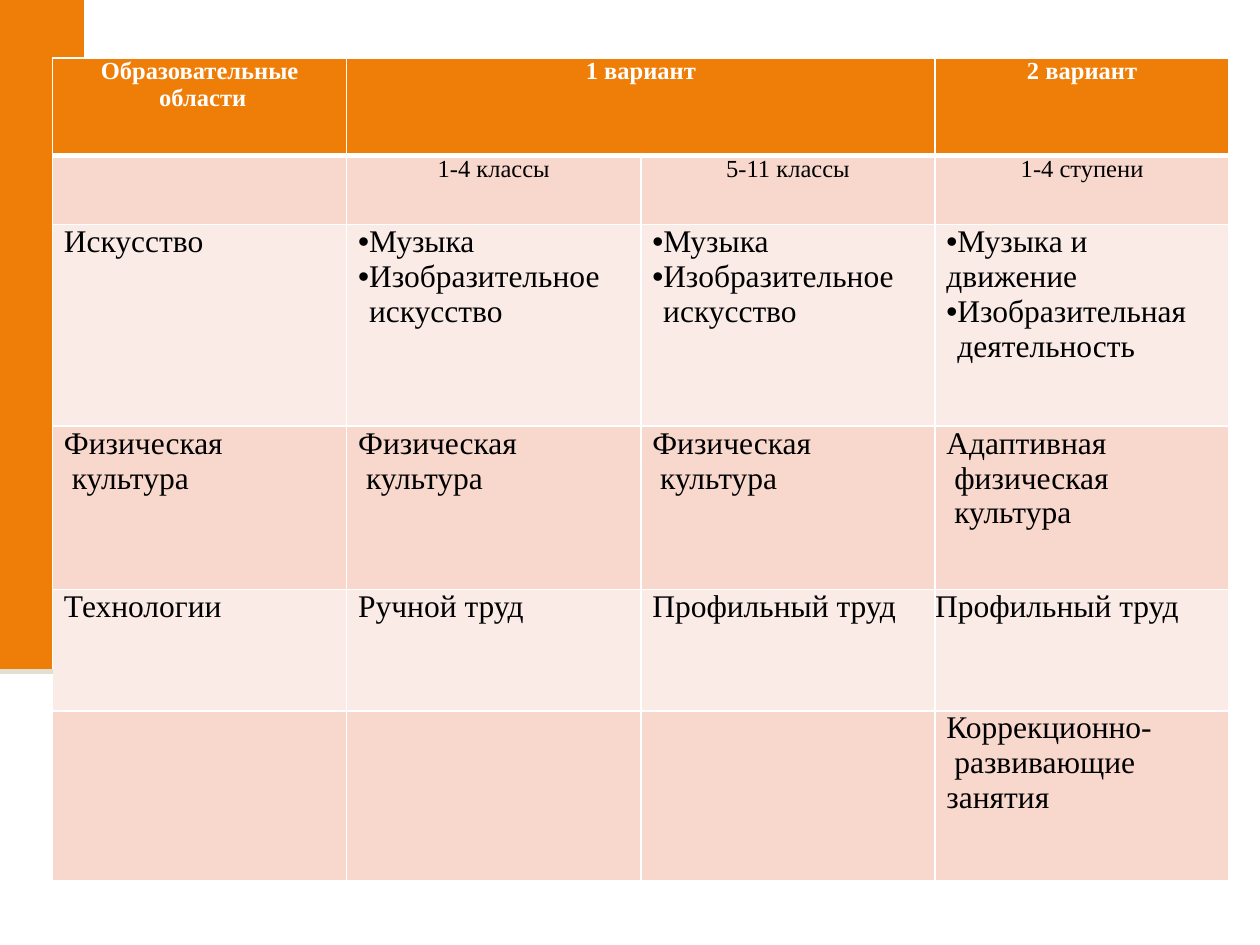
"""Builds a slide with a table of educational areas by programme variant."""
import pptx
import pptx.dml.color
import pptx.enum.text
import pptx.oxml.ns
import pptx.util
from lxml import etree
from pptx.util import Cm, Pt

THEME = {
    "accent": "EF7E09", "dark_band": "F8D7CC", "light_band": "FBEBE7",
    "edge": "E2DED1", "white": "FFFFFF", "text": "000000",
    "font": "Times New Roman", "bullet_font": "Arial",
    "head_size": 14, "body_size": 18,
    "thin": 1, "header_rule": 3, "edge_rule": 3.5,
}

BULLET = "•"
ARTS = ["•Музыка", "•Изобразительное искусство"]
PHYSICAL = ["Физическая\v культура"]
ROWS = [
    (0, [["Образовательные\v области"], ["1 вариант"], [], ["2 вариант"]]),
    (1, [[], ["1-4 классы"], ["5-11 классы"], ["1-4 ступени"]]),
    (2, [["Искусство"], ARTS, ARTS,
         ["•Музыка и", "движение", "•Изобразительная деятельность"]]),
    (3, [PHYSICAL, PHYSICAL, PHYSICAL, ["Адаптивная\v физическая\v культура"]]),
    (4, [["Технологии"], ["Ручной труд"], ["Профильный труд"], ["Профильный труд"]]),
    (6, [[], [], [], ["Коррекционно-\v развивающие занятия"]]),
]
FLUSH_CELL = (4, 4)
ROW_HEIGHTS = [1.96, 1.4, 4.06, 3.3, 1.65, 0.79, 3.43]
ROW_FILLS = ["accent", "dark_band", "light_band", "dark_band",
             "light_band", "light_band", "dark_band"]
COLUMN_WIDTHS = [1.09] + [5.93] * 4
TABLE_LEFT, TABLE_TOP = -0.03, 1.17
SIDE_WIDTH, SIDE_HEIGHT = 1.7, 13.54
TEXT_INDENT, BULLET_INDENT = 0.23, 0.22
MERGES = [((0, 0), (4, 0)), ((0, 2), (0, 3)), ((5, 0), (6, 0))]
MERGES += [((4, column), (5, column)) for column in range(1, 5)]


def color(name):
    return pptx.dml.color.RGBColor.from_string(THEME[name])


def set_borders(cell, borders):
    properties = cell._tc.get_or_add_tcPr()
    for side in "LRTB":
        line = etree.SubElement(properties, pptx.oxml.ns.qn("a:ln" + side))
        if side not in borders:
            etree.SubElement(line, pptx.oxml.ns.qn("a:noFill"))
            continue
        name, width = borders[side]
        line.set("w", str(Pt(THEME[width])))
        fill = etree.SubElement(line, pptx.oxml.ns.qn("a:solidFill"))
        etree.SubElement(fill, pptx.oxml.ns.qn("a:srgbClr"), val=THEME[name])


def borders_for(row, column):
    if column == 0:
        borders = {"R": ("white", "thin")}
        if row < 5:
            borders["B"] = ("edge", "edge_rule")
        elif row == 5:
            borders["T"] = ("edge", "edge_rule")
        return borders
    borders = {side: ("white", "thin") for side in "LRTB"}
    if row < 2:
        borders["B" if row == 0 else "T"] = ("white", "header_rule")
    return borders


def style_cell(cell, row, column):
    cell.margin_left = cell.margin_right = cell.margin_top = cell.margin_bottom = 0
    set_borders(cell, borders_for(row, column))
    if column == 0 and row >= 5:
        cell.fill.background()
    else:
        cell.fill.solid()
        cell.fill.fore_color.rgb = color("accent" if column == 0 else ROW_FILLS[row])


def indent_paragraph(paragraph, bulleted):
    properties = paragraph._p.get_or_add_pPr()
    hanging = BULLET_INDENT if bulleted else 0
    properties.set("marL", str(Cm(TEXT_INDENT + hanging)))
    properties.set("indent", str(-Cm(hanging)))
    if bulleted:
        etree.SubElement(properties, pptx.oxml.ns.qn("a:buFont"),
                         typeface=THEME["bullet_font"])
        etree.SubElement(properties, pptx.oxml.ns.qn("a:buChar"), char=BULLET)


def write_cell(cell, lines, row, column):
    cell.text_frame.text = "\n".join(line.lstrip(BULLET) for line in lines)
    for number, (paragraph, line) in enumerate(zip(cell.text_frame.paragraphs, lines)):
        paragraph.space_before = Pt(2.5 if number == 0 else 0)
        if row < 2:
            paragraph.alignment = pptx.enum.text.PP_ALIGN.CENTER
        elif (row, column) != FLUSH_CELL:
            indent_paragraph(paragraph, line.startswith(BULLET))
        for run in paragraph.runs:
            run.font.name = THEME["font"]
            run.font.size = Pt(THEME["head_size" if row < 2 else "body_size"])
            run.font.bold = row == 0
            run.font.color.rgb = color("white" if row == 0 else "text")


def add_side_block(slide):
    builder = slide.shapes.build_freeform(0, 0)
    width, height = Cm(SIDE_WIDTH), Cm(SIDE_HEIGHT)
    builder.add_line_segments([(width, 0), (width, height), (0, height)])
    shape = builder.convert_to_shape()
    shape.shadow.inherit = False
    shape.fill.solid()
    shape.fill.fore_color.rgb = color("accent")
    shape.line.fill.background()


def add_areas_table(slide):
    table = slide.shapes.add_table(
        len(ROW_HEIGHTS), len(COLUMN_WIDTHS), Cm(TABLE_LEFT), Cm(TABLE_TOP),
        Cm(sum(COLUMN_WIDTHS)), Cm(sum(ROW_HEIGHTS))).table
    table.first_row = table.horz_banding = False
    for column, width in zip(table.columns, COLUMN_WIDTHS):
        column.width = Cm(width)
    for row, height in enumerate(ROW_HEIGHTS):
        table.rows[row].height = Cm(height)
        for column in range(len(COLUMN_WIDTHS)):
            style_cell(table.cell(row, column), row, column)
    for first, last in MERGES:
        table.cell(*first).merge(table.cell(*last))
    for row, texts in ROWS:
        for column, lines in enumerate(texts, start=1):
            if lines:
                write_cell(table.cell(row, column), lines, row, column)


def main():
    presentation = pptx.Presentation()
    presentation.slide_width, presentation.slide_height = Cm(25.4), Cm(19.05)
    slide = presentation.slides.add_slide(presentation.slide_layouts[6])
    add_side_block(slide)
    add_areas_table(slide)
    presentation.save("out.pptx")


if __name__ == "__main__":
    main()
